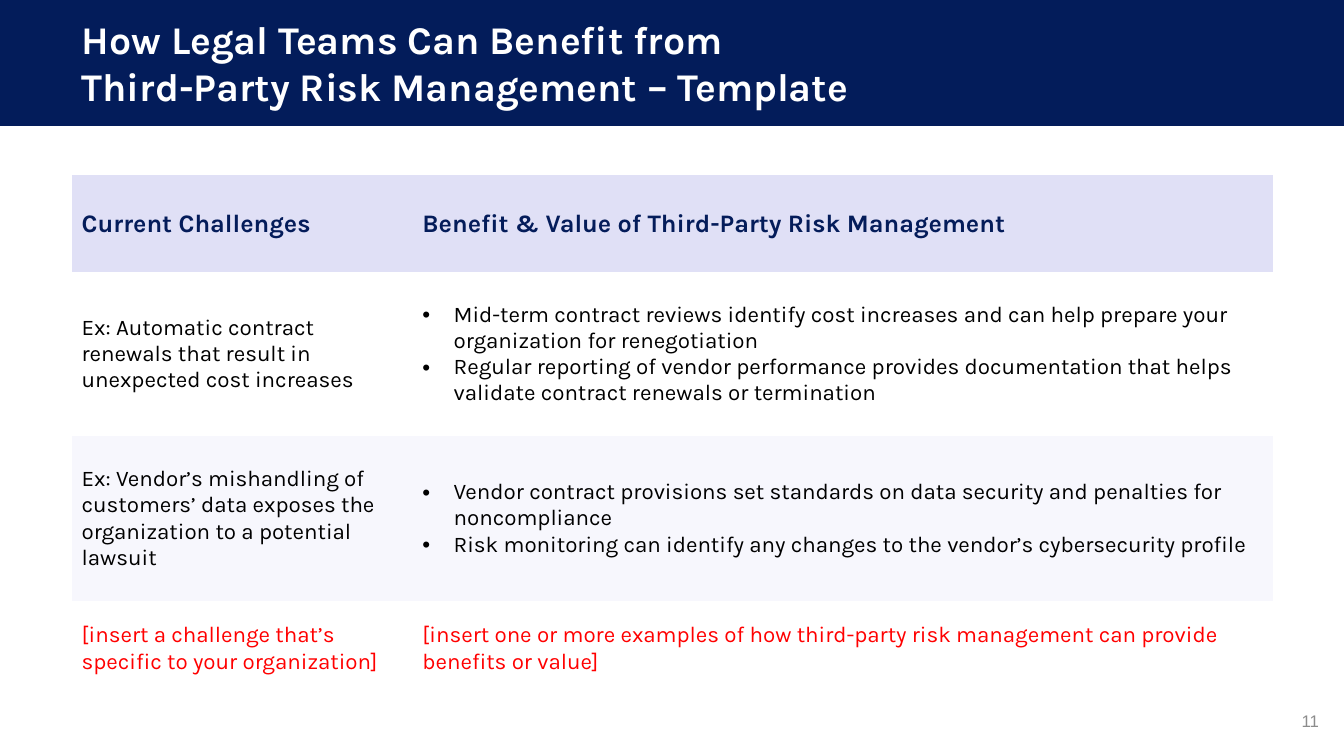
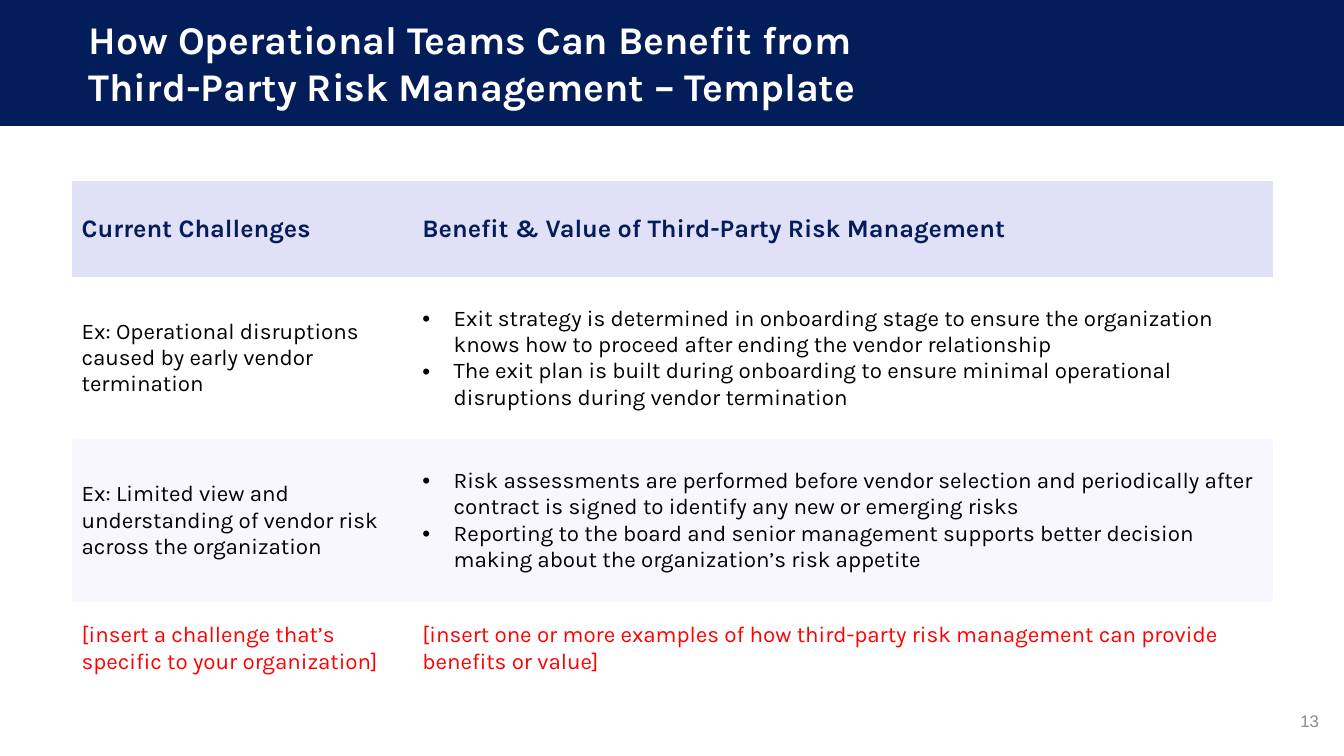
from dataclasses import dataclass

from lxml import etree
from pptx import Presentation
from pptx.dml.color import RGBColor
from pptx.enum import shapes, text
from pptx.oxml import ns
from pptx.util import Inches, Pt

NAVY = RGBColor(0x03, 0x1C, 0x5A)
HEADING = RGBColor(0x04, 0x1C, 0x5A)
LAVENDER = RGBColor(0xE0, 0xE0, 0xF6)
PALE_LAVENDER = RGBColor(0xF7, 0xF7, 0xFD)
WHITE = RGBColor(0xFF, 0xFF, 0xFF)
BLACK = RGBColor(0, 0, 0)
RED = RGBColor(0xFF, 0, 0)
GREY = RGBColor(0x8C, 0x8C, 0x8C)

SLIDE_WIDTH, SLIDE_HEIGHT = Inches(13.33), Inches(7.5)
COLUMN_WIDTHS = (3.38, 8.54)
NO_GRID_STYLE = "{2D5ABB26-0587-4C30-8999-92F81FD0307C}"
HEADINGS = ("Current Challenges", "Benefit & Value of Third-Party Risk Management")
PROMPTS = (
    "[insert a challenge that’s specific to your organization]",
    "[insert one or more examples of how third-party risk management can provide benefits or value]",
)


@dataclass(frozen=True)
class Example:
    challenge: str
    benefits: tuple[str, ...]


@dataclass(frozen=True)
class TeamPage:
    team: str
    number: int
    title_left: float
    table_top: float
    row_heights: tuple[float, ...]
    examples: tuple[Example, ...]


PAGES = (
    TeamPage("Legal", 11, 0.71, 1.74, (0.96, 1.63, 1.63, 0.95), (
        Example("Ex: Automatic contract renewals that result in unexpected cost increases", (
            "Mid-term contract reviews identify cost increases and can help prepare your "
            "organization for renegotiation",
            "Regular reporting of vendor performance provides documentation that helps "
            "validate contract renewals or termination",
        )),
        Example("Ex: Vendor’s mishandling of customers’ data exposes the organization "
                "to a potential lawsuit", (
            "Vendor contract provisions set standards on data security and penalties for "
            "noncompliance",
            "Risk monitoring can identify any changes to the vendor’s cybersecurity profile",
        )),
    )),
    TeamPage("Operational", 13, 0.78, 1.8, (0.95, 1.61, 1.61, 0.93), (
        Example("Ex: Operational disruptions caused by early vendor termination", (
            "Exit strategy is determined in onboarding stage to ensure the organization "
            "knows how to proceed after ending the vendor relationship",
            "The exit plan is built during onboarding to ensure minimal operational "
            "disruptions during vendor termination",
        )),
        Example("Ex: Limited view and understanding of vendor risk across the organization", (
            "Risk assessments are performed before vendor selection and periodically after "
            "contract is signed to identify any new or emerging risks",
            "Reporting to the board and senior management supports better decision making "
            "about the organization’s risk appetite",
        )),
    )),
)


def write(frame, *lines: str, size: float = 16, color: RGBColor = BLACK, bold: bool = False,
          font: str = "Karla", align=text.PP_ALIGN.LEFT, bullets: bool = False) -> None:
    frame.word_wrap = True
    for index, line in enumerate(lines):
        paragraph = frame.add_paragraph() if index else frame.paragraphs[0]
        paragraph.alignment = align
        run = paragraph.add_run()
        run.text = line
        run.font.name, run.font.size, run.font.bold = font, Pt(size), bold
        run.font.color.rgb = color
        if bullets:
            properties = paragraph._p.get_or_add_pPr()
            properties.set("marL", str(Inches(0.31)))
            properties.set("indent", str(-Inches(0.31)))
            etree.SubElement(properties, ns.qn("a:buFont")).set("typeface", "Arial")
            etree.SubElement(properties, ns.qn("a:buChar")).set("char", "•")


def add_title(slide, page: TeamPage) -> None:
    title = slide.shapes.title
    title.left, title.top = Inches(page.title_left), Inches(0.1)
    title.width, title.height = Inches(10.07), Inches(1.04)
    frame = title.text_frame
    frame.vertical_anchor = text.MSO_ANCHOR.TOP
    frame.auto_size = text.MSO_AUTO_SIZE.SHAPE_TO_FIT_TEXT
    write(frame, f"How {page.team} Teams Can Benefit from",
          "Third-Party Risk Management – Template", size=28, color=WHITE, bold=True)

    band = slide.shapes.add_shape(shapes.MSO_SHAPE.RECTANGLE, 0, 0, SLIDE_WIDTH, Inches(1.25))
    band.shadow.inherit = False
    band.fill.solid()
    band.fill.fore_color.rgb = NAVY
    band.line.fill.background()
    title.element.addprevious(band.element)


def fill_cell(cell, *lines: str, fill: RGBColor | None = None, margin: float = 0.1,
              **style) -> None:
    cell.vertical_anchor = text.MSO_ANCHOR.MIDDLE
    cell.margin_left = cell.margin_right = Inches(0.1)
    cell.margin_top = cell.margin_bottom = Inches(margin)
    if fill is None:
        cell.fill.background()
    else:
        cell.fill.solid()
        cell.fill.fore_color.rgb = fill
    write(cell.text_frame, *lines, **style)


def add_benefits_table(slide, page: TeamPage) -> None:
    holder = slide.shapes.add_table(
        len(page.row_heights), len(COLUMN_WIDTHS), Inches(0.71), Inches(page.table_top),
        Inches(sum(COLUMN_WIDTHS)), Inches(sum(page.row_heights)))
    holder.element.find(".//" + ns.qn("a:tableStyleId")).text = NO_GRID_STYLE
    table = holder.table
    table.horz_banding = False
    for column, width in zip(table.columns, COLUMN_WIDTHS):
        column.width = Inches(width)
    for row, height in zip(table.rows, page.row_heights):
        row.height = Inches(height)

    last = len(page.row_heights) - 1
    for column, (heading, prompt) in enumerate(zip(HEADINGS, PROMPTS)):
        fill_cell(table.cell(0, column), heading, fill=LAVENDER, margin=0.05,
                  size=18, color=HEADING, bold=True)
        fill_cell(table.cell(last, column), prompt, color=RED)
    for row, example in enumerate(page.examples, start=1):
        fill = None if row % 2 else PALE_LAVENDER
        fill_cell(table.cell(row, 0), example.challenge, fill=fill)
        fill_cell(table.cell(row, 1), *example.benefits, fill=fill, bullets=True)


def add_page_number(slide, number: int) -> None:
    footer = slide.shapes.add_textbox(Inches(10.18), Inches(6.95), Inches(3), Inches(0.4))
    footer.text_frame.vertical_anchor = text.MSO_ANCHOR.MIDDLE
    write(footer.text_frame, str(number), size=12, color=GREY, font="Arial",
          align=text.PP_ALIGN.RIGHT)


def main() -> None:
    deck = Presentation()
    deck.slide_width, deck.slide_height = SLIDE_WIDTH, SLIDE_HEIGHT
    title_only = deck.slide_layouts.get_by_name("Title Only")
    for page in PAGES:
        slide = deck.slides.add_slide(title_only)
        add_title(slide, page)
        add_benefits_table(slide, page)
        add_page_number(slide, page.number)
    deck.save("out.pptx")


if __name__ == "__main__":
    main()
